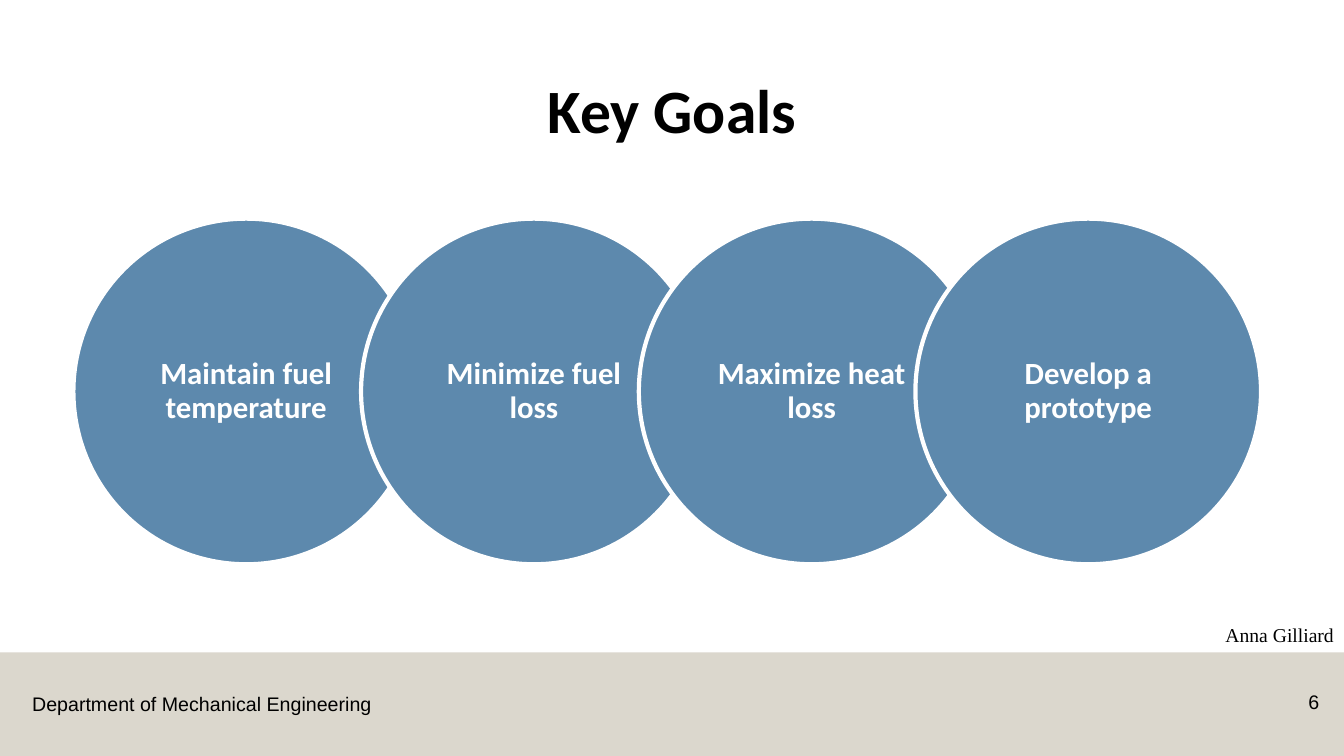
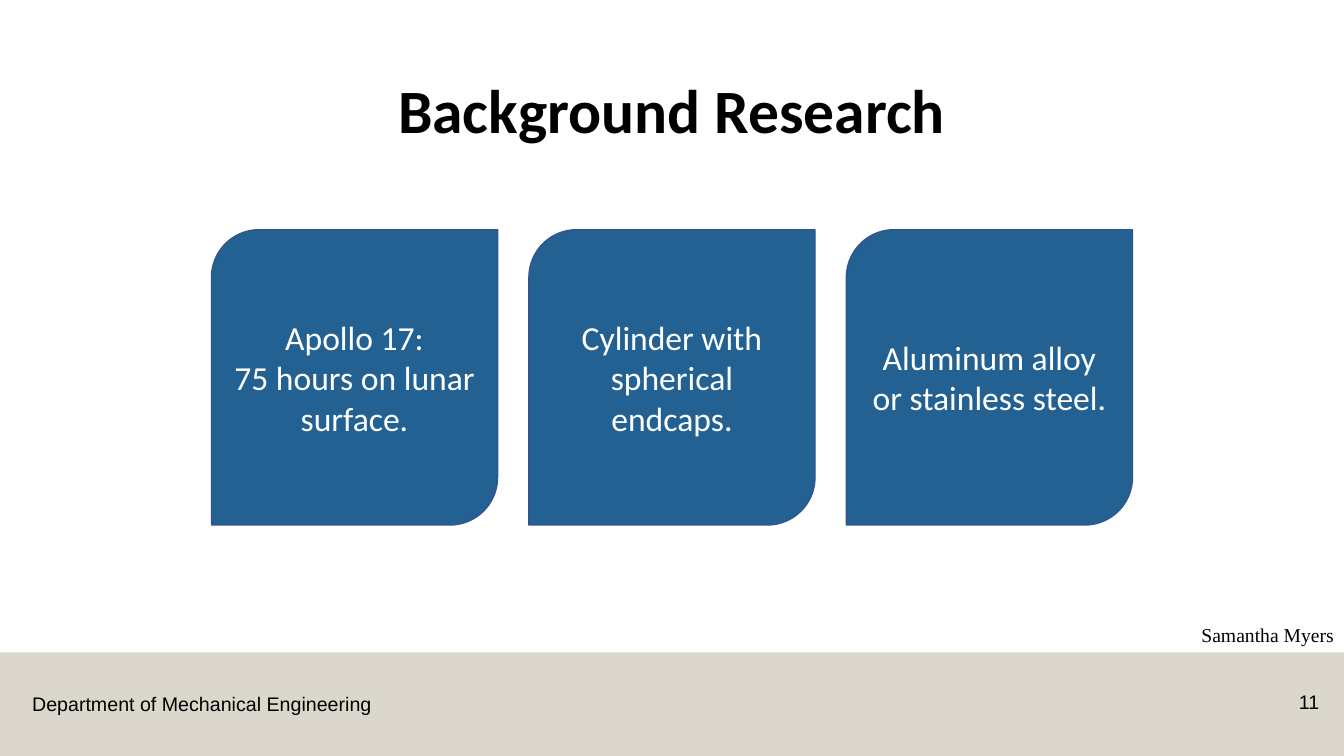
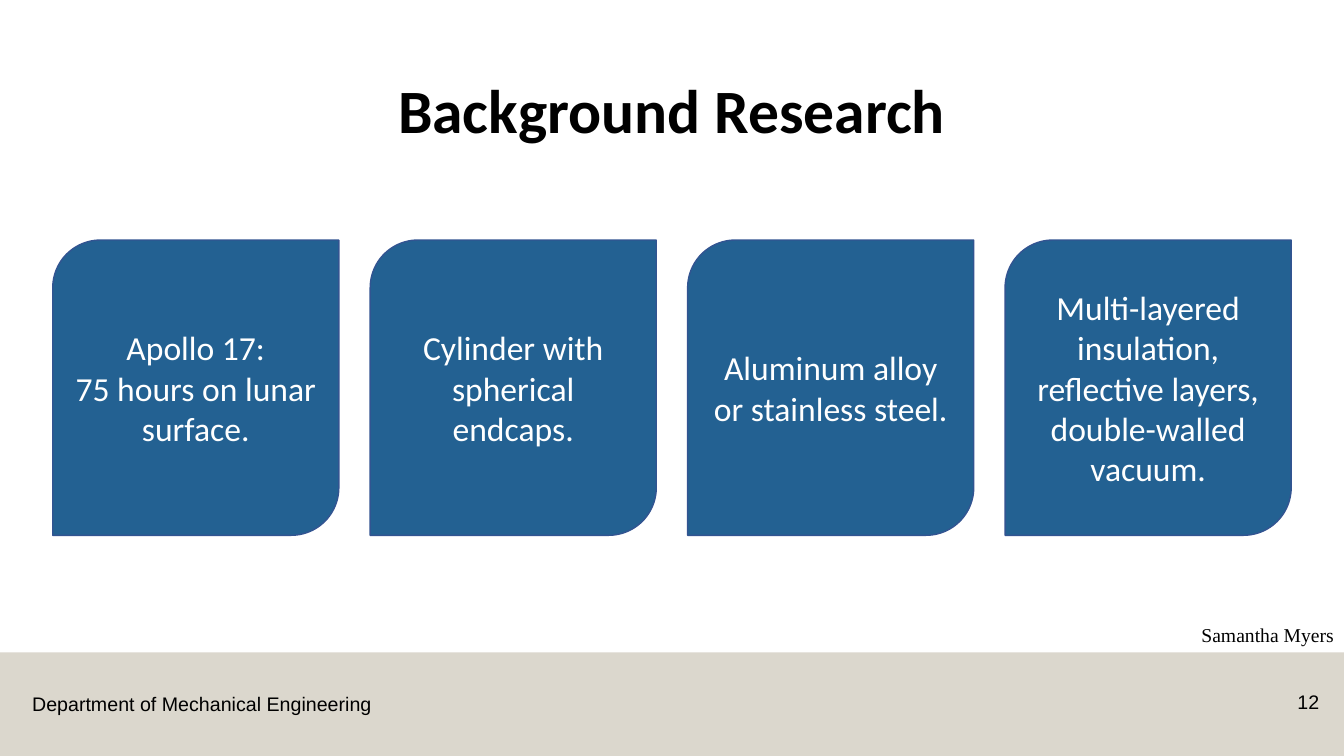
"""Build three design-review slides: key goals and two background research rows."""
from dataclasses import dataclass

from pptx import Presentation
from pptx.dml.color import RGBColor
from pptx.enum.shapes import MSO_SHAPE
from pptx.enum.text import MSO_ANCHOR, MSO_AUTO_SIZE, PP_ALIGN
from pptx.util import Cm, Pt

CIRCLE, CARD, BAND = MSO_SHAPE.OVAL, MSO_SHAPE.ROUND_2_DIAG_RECTANGLE, MSO_SHAPE.RECTANGLE
LEFT, CENTER, RIGHT = PP_ALIGN.LEFT, PP_ALIGN.CENTER, PP_ALIGN.RIGHT
TOP, MIDDLE = MSO_ANCHOR.TOP, MSO_ANCHOR.MIDDLE
NO_FIT = MSO_AUTO_SIZE.NONE

DEPARTMENT = "Department of Mechanical Engineering"
FINDINGS = [
    ["Apollo 17:", "75 hours on lunar surface."],
    ["Cylinder with spherical endcaps."],
    ["Aluminum alloy or stainless steel."],
    ["Multi-layered insulation,", "reflective layers,", "double-walled vacuum."],
]
GOALS = [
    (1.85, "Maintain fuel temperature"),
    (9.1, "Minimize fuel loss"),
    (16.1, "Maximize heat loss"),
    (23.07, "Develop a prototype"),
]
GOALS_SLIDE = {"title": "Key Goals", "number": "6", "presenter": "Anna Gilliard"}
RESEARCH_SLIDES = [
    {"title": "Background Research", "number": "11", "presenter": "Samantha Myers",
     "findings": FINDINGS[:3], "top": 5.79},
    {"title": "Background Research", "number": "12", "presenter": "Samantha Myers",
     "findings": FINDINGS, "top": 6.05},
]

SLIDE_WIDTH, SLIDE_HEIGHT = 33.87, 19.05
BAND_TOP = 16.44
CIRCLE_TOP, CIRCLE_SIZE = 5.51, 8.71
CARD_WIDTH, CARD_HEIGHT, CARD_PITCH = 7.21, 7.44, 8.0


@dataclass(frozen=True)
class Theme:
    """Colours and type styles."""
    band = RGBColor.from_string("DBD7CD")
    circle = RGBColor.from_string("5D89AD")
    card = RGBColor.from_string("236192")
    card_edge = RGBColor.from_string("325491")
    white = RGBColor.from_string("FFFFFF")
    black = RGBColor.from_string("000000")
    title = {"name": "Calibri", "size": Pt(44), "bold": True}
    goal = {"name": "Calibri", "size": Pt(22), "bold": True}
    finding = {"name": "Calibri", "size": Pt(24), "bold": False}
    footer = {"name": "Arial", "size": Pt(14)}
    presenter = {"name": "Times New Roman", "size": Pt(14)}


THEME = Theme()


def set_all(target, values):
    """Set each named attribute on the target."""
    for name, value in values.items():
        setattr(target, name, value)


def write(shape, lines, font, color, align, spacing=1.0, **frame):
    """Fill a shape with formatted paragraphs."""
    text = shape.text_frame
    text.text = "\n".join(lines)
    set_all(text, {"word_wrap": True, "auto_size": NO_FIT, **frame})
    for paragraph in text.paragraphs:
        set_all(paragraph, {"alignment": align, "line_spacing": spacing})
        set_all(paragraph.font, font)
        paragraph.font.color.rgb = color


def add_label(slide, box, line, font, align, **frame):
    """Add a one-line black text box."""
    label = slide.shapes.add_textbox(*map(Cm, box))
    write(label, [line], font, THEME.black, align, vertical_anchor=TOP, **frame)
    return label


def add_block(slide, kind, box, fill, edge=None, edge_width=0):
    """Add a flat filled shape with an optional outline."""
    block = slide.shapes.add_shape(kind, *map(Cm, box))
    block.shadow.inherit = False
    block.fill.solid()
    block.fill.fore_color.rgb = fill
    if edge is None:
        block.line.fill.background()
    else:
        block.line.color.rgb = edge
        block.line.width = Pt(edge_width)
    return block


def add_slide(deck, layout, content):
    """Add a slide with its title, number and presenter."""
    slide = deck.slides.add_slide(layout)
    title = slide.shapes.title
    set_all(title, {"left": Cm(2.33), "top": Cm(1.01), "width": Cm(29.21), "height": Cm(3.68)})
    write(title, [content["title"]], THEME.title, THEME.black, CENTER, 0.9,
          vertical_anchor=MIDDLE)
    add_label(slide, (31.55, 17.25, 1.95, 1.02), content["number"], THEME.footer, RIGHT)
    add_label(slide, (28.65, 15.56, 5.22, 0.86), content["presenter"], THEME.presenter, RIGHT)
    return slide


def move_footer_to_layout(slide, layout):
    """Build the footer band and department line once, on the layout."""
    band = add_block(slide, BAND, (0, BAND_TOP, SLIDE_WIDTH, SLIDE_HEIGHT - BAND_TOP), THEME.band)
    department = add_label(slide, (0.56, 17.32, 9.12, 0.86), DEPARTMENT, THEME.footer, LEFT,
                           word_wrap=False)
    for part in (band, department):
        layout.shapes.element.append(part.element)


def add_goals(slide):
    """Draw the overlapping goal circles."""
    for left, goal in GOALS:
        circle = add_block(slide, CIRCLE, (left, CIRCLE_TOP, CIRCLE_SIZE, CIRCLE_SIZE),
                           THEME.circle, THEME.white, 3)
        write(circle, [goal], THEME.goal, THEME.white, CENTER, 0.9, vertical_anchor=MIDDLE,
              margin_left=Cm(0.48), margin_right=Cm(0.48))


def add_findings(slide, findings, top):
    """Draw a centred row of finding cards."""
    row_width = (len(findings) - 1) * CARD_PITCH + CARD_WIDTH
    first_left = (SLIDE_WIDTH - row_width) / 2
    for index, lines in enumerate(findings):
        box = (first_left + index * CARD_PITCH, top, CARD_WIDTH, CARD_HEIGHT)
        card = add_block(slide, CARD, box, THEME.card, THEME.card_edge, 1)
        write(card, lines, THEME.finding, THEME.white, CENTER, vertical_anchor=MIDDLE,
              margin_left=Cm(0.15), margin_right=Cm(0.15))


def main():
    """Build and save the deck."""
    deck = Presentation()
    set_all(deck, {"slide_width": Cm(SLIDE_WIDTH), "slide_height": Cm(SLIDE_HEIGHT)})
    layout = deck.slide_layouts.get_by_name("Title Only")
    goals = add_slide(deck, layout, GOALS_SLIDE)
    move_footer_to_layout(goals, layout)
    add_goals(goals)
    for content in RESEARCH_SLIDES:
        research = add_slide(deck, layout, content)
        add_findings(research, content["findings"], content["top"])
    deck.save("out.pptx")


if __name__ == "__main__":
    main()
